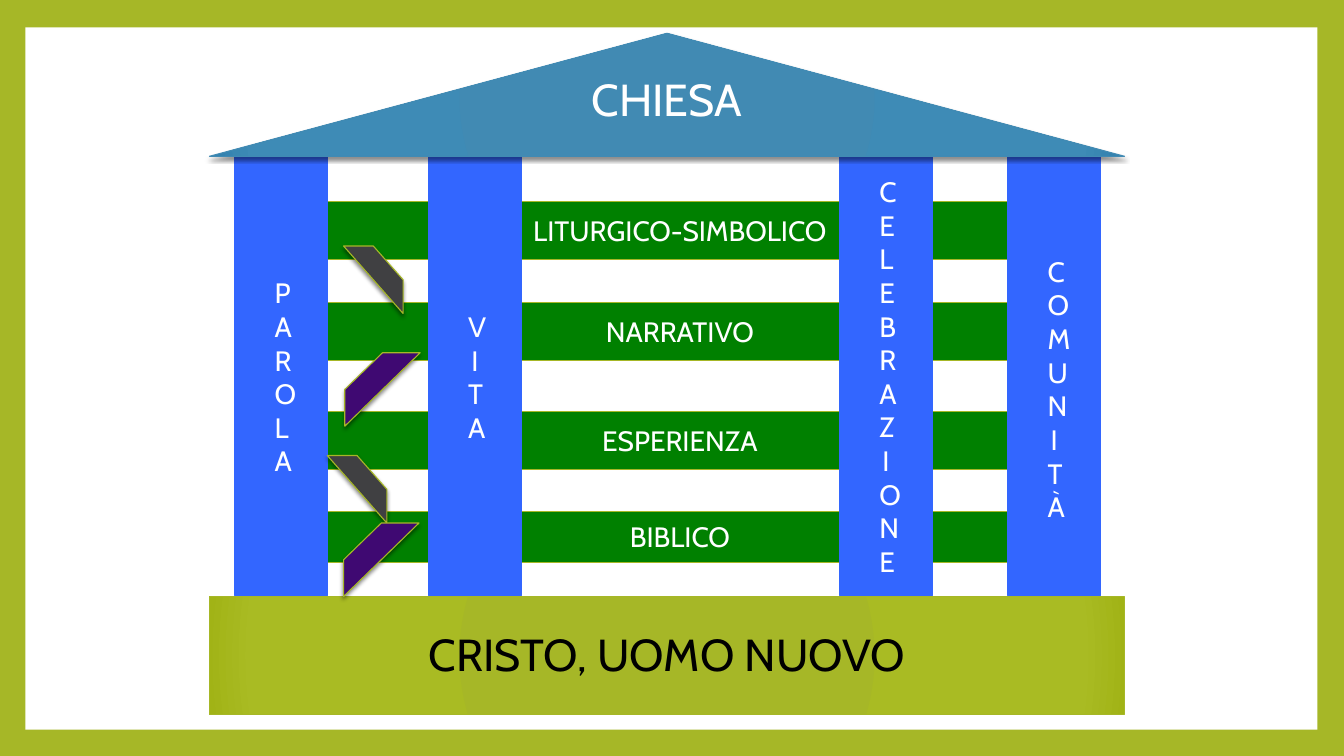
import dataclasses
import typing

import lxml.etree
import pptx
import pptx.dml.color
import pptx.enum.shapes
import pptx.enum.text
import pptx.oxml.ns
import pptx.util

Cm = pptx.util.Cm
Kind = pptx.enum.shapes.MSO_SHAPE
qn = pptx.oxml.ns.qn

OLIVE = "A6B727"
WHITE = "FFFFFF"
BLACK = "000000"
BLUE = "3366FF"
GREEN = "008000"
PURPLE = "3F0972"
GREY = "404042"

PILLAR_TOP, PILLAR_WIDTH, PILLAR_HEIGHT = 3.94, 2.34, 11.07
TEMPLE_LEFT, TEMPLE_WIDTH = 5.28, 23.06
BEAM_WIDTH = 20.32
BEAM_LABEL_LEFT, BEAM_LABEL_WIDTH, BEAM_LABEL_HEIGHT = 13.11, 8.05, 1.12
LETTER_PITCH, TEXT_MARGINS = 0.85, 0.25


@dataclasses.dataclass
class Part:
    left: float
    top: float
    width: float
    height: float
    fill: str
    line: typing.Optional[str] = OLIVE
    kind: Kind = Kind.RECTANGLE
    gradient: typing.Tuple[str, ...] = ()
    shadow: bool = False
    flipped: bool = False


@dataclasses.dataclass
class Label:
    text: str
    left: float
    top: float
    width: float
    height: float
    size: int = 20
    color: str = WHITE


@dataclasses.dataclass
class Beam:
    text: str
    left: float
    top: float
    height: float = 1.47


@dataclasses.dataclass
class Pillar:
    text: str
    left: float
    middle: float = 9.5


BEAMS = [
    Beam("LITURGICO-SIMBOLICO", 7.19, 5.08),
    Beam("NARRATIVO", 7.19, 7.62),
    Beam("ESPERIENZA", 6.78, 10.36),
    Beam("BIBLICO", 7.42, 12.9, 1.27),
]
PILLARS = [
    Pillar("PAROLA", 5.92),
    Pillar("VITA", 10.8),
    Pillar("CELEBRAZIONE", 21.16),
    Pillar("COMUNITÀ", 25.57, 9.81),
]
PILLARS[-1].left = 25.4


def rgb(color: str) -> pptx.dml.color.RGBColor:
    return pptx.dml.color.RGBColor.from_string(color)


def add_node(parent: typing.Any, tag: str, **values: typing.Any) -> typing.Any:
    attributes = {name: str(value) for name, value in values.items()}
    return lxml.etree.SubElement(parent, qn(tag), attributes)


def apply_gradient(properties: typing.Any, colors: typing.Tuple[str, ...]) -> None:
    gradient = lxml.etree.Element(qn("a:gradFill"), {"rotWithShape": "1"})
    stops = add_node(gradient, "a:gsLst")
    for position, color in zip((0, 90000, 100000), colors):
        add_node(add_node(stops, "a:gs", pos=position), "a:srgbClr", val=color)
    focus = add_node(gradient, "a:path", path="circle")
    add_node(focus, "a:fillToRect", **dict.fromkeys("ltrb", 100000))
    properties.replace(properties.find(qn("a:solidFill")), gradient)


def apply_shadow(properties: typing.Any) -> None:
    shadow = add_node(
        properties.find(qn("a:effectLst")), "a:outerShdw",
        blurRad=pptx.util.Pt(3), dist=pptx.util.Pt(2), dir=90 * 60000,
        algn="ctr", rotWithShape=0,
    )
    add_node(add_node(shadow, "a:srgbClr", val=BLACK), "a:alpha", val=45000)


def draw_part(slide: typing.Any, part: Part) -> None:
    shape = slide.shapes.add_shape(
        part.kind, Cm(part.left), Cm(part.top), Cm(part.width), Cm(part.height)
    )
    shape.shadow.inherit = False
    shape.fill.solid()
    shape.fill.fore_color.rgb = rgb(part.fill)
    if part.line:
        shape.line.color.rgb = rgb(part.line)
        shape.line.width = pptx.util.Pt(0.79)
    else:
        shape.line.fill.background()
    properties = shape._element.spPr
    if part.gradient:
        apply_gradient(properties, part.gradient)
    if part.shadow:
        apply_shadow(properties)
    if part.flipped:
        properties.find(qn("a:xfrm")).set("flipH", "1")


def draw_label(slide: typing.Any, label: Label) -> None:
    box = slide.shapes.add_textbox(
        Cm(label.left), Cm(label.top), Cm(label.width), Cm(label.height)
    )
    frame = box.text_frame
    paragraph = frame.paragraphs[0]
    run = paragraph.add_run()
    formats = {
        frame: {
            "word_wrap": True,
            "auto_size": pptx.enum.text.MSO_AUTO_SIZE.SHAPE_TO_FIT_TEXT,
        },
        paragraph: {"alignment": pptx.enum.text.PP_ALIGN.CENTER},
        run: {"text": label.text},
        run.font: {"name": "Cabin", "size": pptx.util.Pt(label.size)},
    }
    for target, values in formats.items():
        for name, value in values.items():
            setattr(target, name, value)
    run.font.color.rgb = rgb(label.color)


def beam_label(beam: Beam) -> Label:
    top = beam.top + (beam.height - BEAM_LABEL_HEIGHT) / 2
    return Label(beam.text, BEAM_LABEL_LEFT, top, BEAM_LABEL_WIDTH, BEAM_LABEL_HEIGHT)


def pillar_label(pillar: Pillar) -> Label:
    height = LETTER_PITCH * len(pillar.text) + TEXT_MARGINS
    return Label(pillar.text, pillar.left + 0.75, pillar.middle - height / 2, 0.84, height)


def purple_stripe(left: float, top: float) -> Part:
    return Part(left, top, 1.9, 1.85, PURPLE, kind=Kind.DIAGONAL_STRIPE, shadow=True)


def grey_stripe(left: float, top: float) -> Part:
    return Part(left, top, 1.5, 1.7, GREY, kind=Kind.DIAGONAL_STRIPE, shadow=True, flipped=True)


def main() -> None:
    presentation = pptx.Presentation()
    presentation.slide_width = Cm(33.87)
    presentation.slide_height = Cm(19.05)
    slide = presentation.slides.add_slide(presentation.slide_layouts[6])
    slide.background.fill.solid()
    slide.background.fill.fore_color.rgb = rgb(OLIVE)

    panel = Part(0.64, 0.69, 32.56, 17.7, WHITE, line=None)
    beams = [Part(b.left, b.top, BEAM_WIDTH, b.height, GREEN) for b in BEAMS]
    foundation = Part(TEMPLE_LEFT, 15.04, TEMPLE_WIDTH, 2.97, OLIVE,
                      gradient=(OLIVE, "A9BB23", "A1B316"))
    pillars = [Part(p.left, PILLAR_TOP, PILLAR_WIDTH, PILLAR_HEIGHT, BLUE, BLUE)
               for p in PILLARS]
    roof = Part(TEMPLE_LEFT, 0.84, TEMPLE_WIDTH, 3.1, "418AB3", "418AB3",
                Kind.ISOSCELES_TRIANGLE, ("418AB3", "3E8BB6", "3180AD"), True)
    stripes = [purple_stripe(8.69, 8.89), grey_stripe(8.25, 11.48),
               purple_stripe(8.66, 13.18), grey_stripe(8.66, 6.2)]
    for part in [panel, *beams, foundation, *pillars, roof, *stripes]:
        draw_part(slide, part)

    labels = [
        Label("CRISTO, UOMO NUOVO", TEMPLE_LEFT, 15.67, TEMPLE_WIDTH, 1.63, 32, BLACK),
        *map(pillar_label, PILLARS),
        *map(beam_label, BEAMS),
        Label("CHIESA", TEMPLE_LEFT, 1.68, TEMPLE_WIDTH, 1.63, 32),
    ]
    for label in labels:
        draw_label(slide, label)

    presentation.save("out.pptx")


if __name__ == "__main__":
    main()
